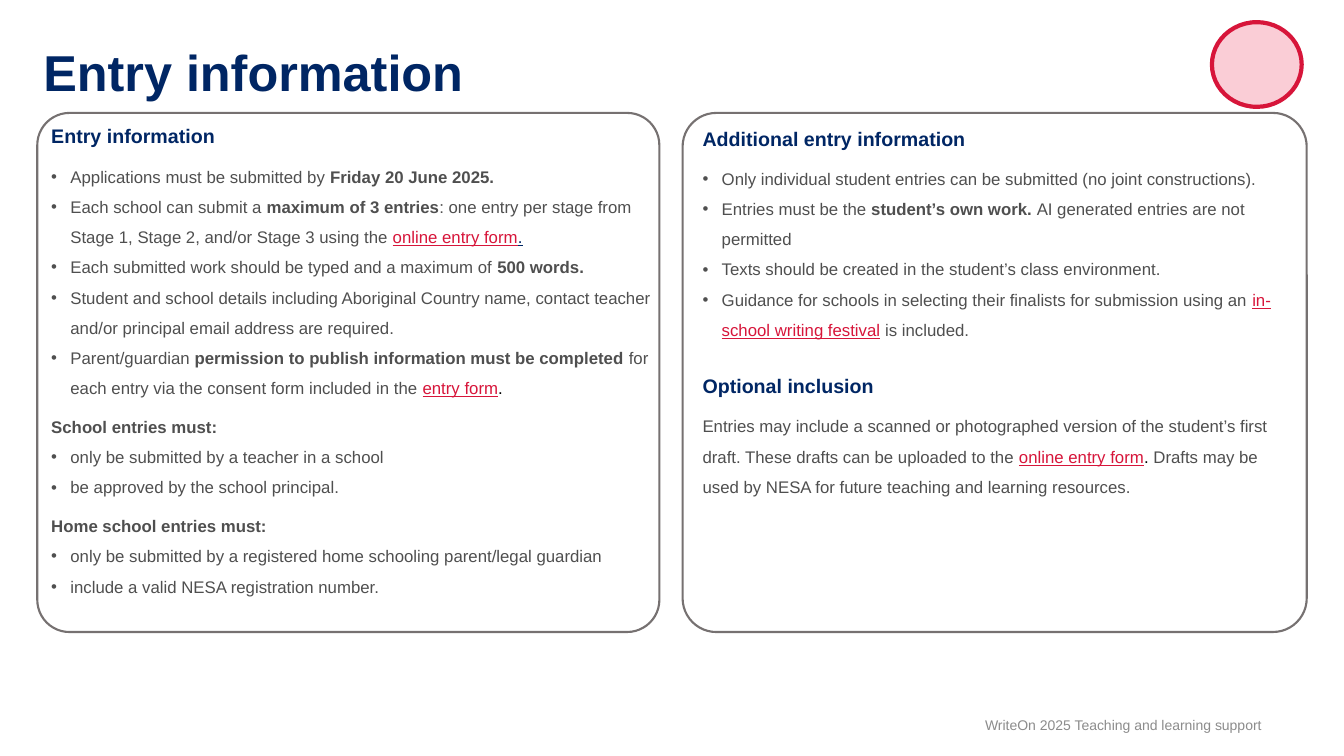
import pptx
import pptx.util
import pptx.dml.color
import pptx.enum.shapes
import pptx.enum.text
import lxml.etree

Inches, Pt = pptx.util.Inches, pptx.util.Pt
ALIGN, ANCHOR = pptx.enum.text.PP_ALIGN, pptx.enum.text.MSO_ANCHOR
SHAPE = pptx.enum.shapes.MSO_SHAPE
NAVY, RED, GREY, BLACK = "002664", "D7153A", "4F4F4F", "000000"

# kind, space after in points, runs of (text, style)
ENTRY = [
    ("heading", 6, [("Entry information", "heading")]),
    ("bullet", 0, [("Applications must be submitted by ", "plain"),
                   ("Friday 20 June 2025.", "bold")]),
    ("bullet", 0, [("Each school can submit a ", "plain"), ("maximum of 3 entries", "bold"),
                   (": one entry per stage from Stage 1, Stage 2, and/or Stage 3 using the ", "plain"),
                   ("online entry form", "link"), (".", "link_end")]),
    ("bullet", 0, [("Each submitted work should be typed and a maximum of ", "plain"),
                   ("500 words.", "bold")]),
    ("bullet", 0, [("Student and school details including Aboriginal Country name, contact teacher "
                    "and/or principal email address are required.", "plain")]),
    ("bullet", 6, [("Parent/guardian ", "plain"),
                   ("permission to publish information must be completed ", "bold"),
                   ("for each entry via the consent form included in the ", "plain"),
                   ("entry form", "link"), (".", "black")]),
    ("body", 0, [("School entries must:", "bold")]),
    ("bullet", 0, [("only be submitted by a teacher in a school", "plain")]),
    ("bullet", 6, [("be approved by the school principal.", "plain")]),
    ("body", 0, [("Home school entries must:", "bold")]),
    ("bullet", 0, [("only be submitted by a registered home schooling parent/legal guardian", "plain")]),
    ("bullet", 0, [("include a valid NESA registration number.", "plain")]),
]
ADDITIONAL = [
    ("heading", 6, [("Additional entry information", "heading")]),
    ("bullet", 0, [("Only individual student entries can be submitted (no joint constructions).", "plain")]),
    ("bullet", 0, [("Entries must be the ", "plain"), ("student’s own work. ", "bold"),
                   ("AI generated entries are not permitted", "plain")]),
    ("bullet", 0, [("Texts should be created in the student’s class environment.", "plain")]),
    ("bullet", 6, [("Guidance for schools in selecting their finalists for submission using an ", "plain"),
                   ("in-school writing festival", "link"), (" is included.", "plain")]),
    ("heading", 6, [("Optional inclusion", "heading")]),
    ("body", 0, [("Entries may include a scanned or photographed version of the student’s first draft. "
                  "These drafts can be uploaded to the ", "plain"),
                 ("online entry form", "link"), (". ", "black"),
                 ("Drafts may be used by NESA for future teaching and learning resources.", "plain")]),
]
# size, colour, bold, underline
STYLES = {
    "heading": (14, NAVY, True, False),
    "plain": (12, GREY, False, False),
    "bold": (12, GREY, True, False),
    "link": (12, RED, False, True),
    "link_end": (12, NAVY, False, True),
    "black": (12, BLACK, False, False),
}


def rgb(value):
    """Turn a hex string into a colour."""
    return pptx.dml.color.RGBColor.from_string(value)


def style_font(font, size, color, bold=False, underline=False):
    """Set the face, size, colour and emphasis of a font."""
    font.name, font.size, font.bold, font.underline = "Arial", Pt(size), bold, underline
    font.color.rgb = rgb(color)


def add_outline(slide, kind, box, line, width, fill=None):
    """Add an outlined shape in the box, filled if a fill is given."""
    sp = slide.shapes.add_shape(kind, *map(Inches, box))
    sp.shadow.inherit = False
    sp.line.color.rgb, sp.line.width = rgb(line), Pt(width)
    if fill:
        sp.fill.solid()
        sp.fill.fore_color.rgb = rgb(fill)
    else:
        sp.fill.background()
    return sp


def add_label(slide, box, text, size, color, bold=False, align=ALIGN.LEFT, anchor=ANCHOR.TOP):
    """Add one line of text without margins."""
    tf = slide.shapes.add_textbox(*map(Inches, box)).text_frame
    tf.word_wrap, tf.vertical_anchor = True, anchor
    tf.margin_left = tf.margin_right = tf.margin_top = tf.margin_bottom = 0
    tf.text = text
    p = tf.paragraphs[0]
    p.alignment, p.line_spacing = align, 0.9 if bold else 1.0
    style_font(p.runs[0].font, size, color, bold)


def add_bullet(p):
    """Give a paragraph a round bullet and a hanging indent."""
    pPr = p._p.get_or_add_pPr()
    pPr.set("marL", str(Inches(0.19)))
    pPr.set("indent", str(-Inches(0.19)))
    ns = pptx.oxml.ns.qn
    lxml.etree.SubElement(pPr, ns("a:buFont")).set("typeface", "Arial")
    lxml.etree.SubElement(pPr, ns("a:buChar")).set("char", "•")


def add_panel(slide, box, radius, inset, text_size, paragraphs):
    """Add a rounded frame in the box with its text set in from the corner."""
    sp = add_outline(slide, SHAPE.ROUNDED_RECTANGLE, box, "767171", 1.5)
    sp.adjustments[0] = radius
    text_box = (box[0] + inset[0], box[1] + inset[1], *text_size)
    tf = slide.shapes.add_textbox(*map(Inches, text_box)).text_frame
    tf.word_wrap = True
    for i, (kind, after, runs) in enumerate(paragraphs):
        p = tf.add_paragraph() if i else tf.paragraphs[0]
        if kind == "bullet":
            add_bullet(p)
        p.line_spacing = 1.15 if kind == "heading" else 1.5
        p.space_before = Pt(16 if kind == "heading" and i else 0)
        p.space_after = Pt(after)
        for text, style in runs:
            r = p.add_run()
            r.text = text
            style_font(r.font, *STYLES[style])


def main():
    """Build the slide and save it."""
    prs = pptx.Presentation()
    prs.slide_width, prs.slide_height = Inches(13.33), Inches(7.5)
    slide = prs.slides.add_slide(prs.slide_layouts[6])
    add_label(slide, (0.43, 0.48, 12.04, 0.55), "Entry information", 36, NAVY, bold=True)
    add_panel(slide, (6.77, 1.12, 6.19, 5.15), 0.065, (0.1, 0.05), (6.1, 4.42), ADDITIONAL)
    add_panel(slide, (0.37, 1.12, 6.17, 5.15), 0.062, (0.04, 0.03), (6.22, 4.83), ENTRY)
    add_outline(slide, SHAPE.OVAL, (12.02, 0.22, 0.89, 0.84), RED, 3, "FACDD6")
    add_label(slide, (8.01, 7.11, 4.5, 0.17), "WriteOn 2025 Teaching and learning support",
              10, "8C8C8C", align=ALIGN.RIGHT, anchor=ANCHOR.BOTTOM)
    prs.save("out.pptx")


if __name__ == "__main__":
    main()
